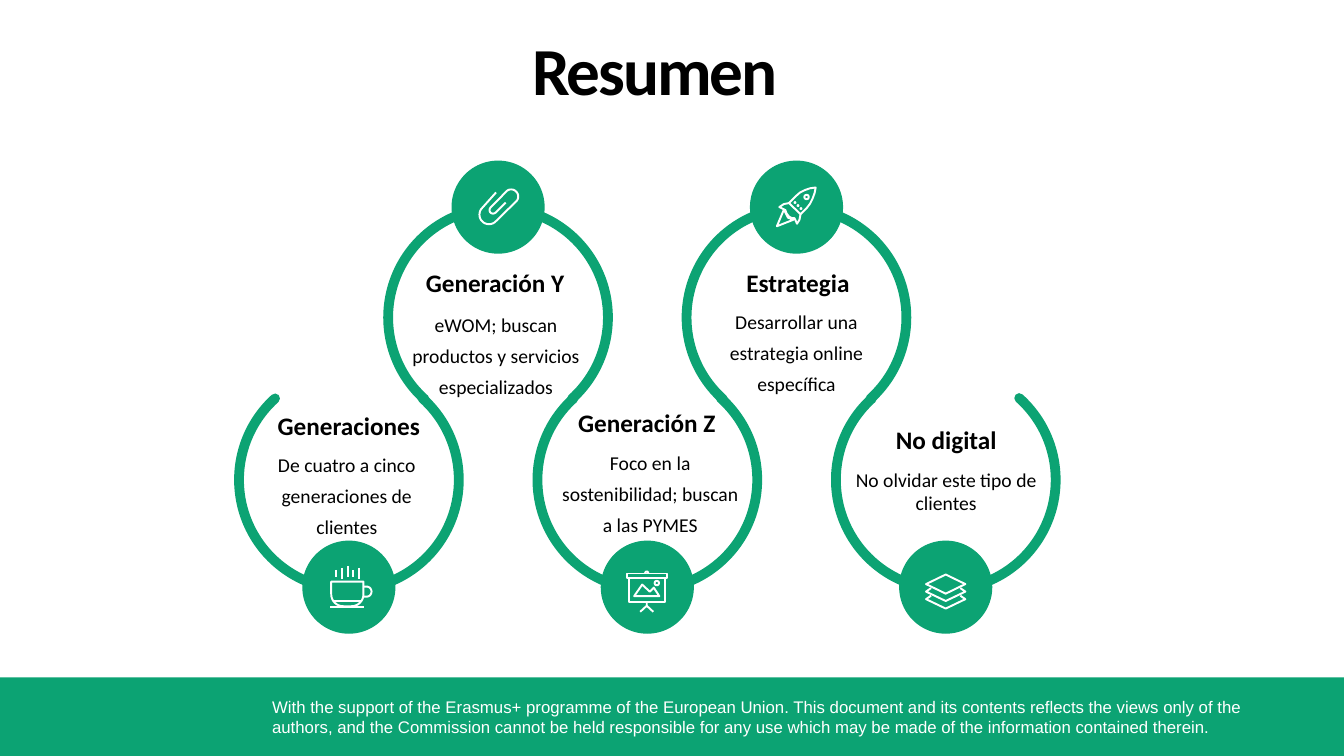
from math import cos, radians, sin

from lxml.etree import SubElement
from pptx import Presentation
from pptx.dml.color import RGBColor
from pptx.enum.shapes import MSO_SHAPE as Shape
from pptx.enum.text import MSO_ANCHOR as Anchor, MSO_AUTO_SIZE as AutoSize, PP_ALIGN as Align
from pptx.oxml.ns import qn
from pptx.util import Inches, Pt

GREEN, WHITE, BLACK = "0CA373", "FFFFFF", "000000"


def curve(x, y, radius, start=0, end=360):
    angles = [radians(start + (end - start) * step / 16) for step in range(17)]
    return [(x + radius * cos(a), y + radius * sin(a)) for a in angles]


CUP = [
    [(10, 160), (330, 160), *curve(210, 285, 120, 0, 90), *curve(130, 285, 120, 90, 180), (10, 160)],
    [(35, 350), (305, 350)],
    [(0, 410), (340, 410)],
    [(330, 210), *curve(360, 260, 50, -90, 90), (325, 310)],
    *[[(x, top), (x, bottom)] for x, top, bottom in
      [(60, 45, 115), (115, 25, 135), (175, 5, 115), (230, 45, 115), (285, 25, 135)]],
]
CLIP = [[(185, 30), *curve(115, 250, 95, 225, 45), *curve(335, 70, 70, 45, -135),
         *curve(155, 205, 35, 225, 45), (280, 130)]]
EASEL = [
    [(10, 30), (410, 30), (410, 70), (10, 70), (10, 30)],
    [(30, 70), (30, 310), (390, 310), (390, 70)],
    curve(210, 25, 15, 180, 360),
    [(210, 310), (210, 350), (145, 410)],
    [(210, 350), (275, 410)],
    [(85, 255), (165, 140), (240, 210), (280, 170), (335, 255), (85, 255)],
    curve(310, 125, 22),
]
ROCKET = [
    [(140, 165), (210, 95), (250, 60), (300, 35), (350, 18), (405, 10), (395, 65),
     (375, 120), (350, 170), (320, 210), (255, 275), (140, 165)],
    [(140, 165), (90, 175), (45, 205), (105, 235), (115, 265), (140, 300),
     (170, 315), (195, 315), (220, 370), (245, 330), (255, 275)],
    [(90, 230), (20, 395), (185, 330), (130, 310), (90, 230)],
    curve(315, 105, 22),
    *[curve(x, y, 4) for x, y in [(200, 160), (230, 190), (260, 220)]],
]
LAYERS = [
    [(10, 105), (205, 10), (400, 105), (205, 200), (10, 105)],
    *[[(60, y), (10, y + 35), (205, y + 128), (400, y + 35), (350, y)] for y in (145, 220)],
]

TITLE = "Resumen"
FOOTER = ("With the support of the Erasmus+ programme of the European Union. This document and its "
          "contents reflects the views only of the authors, and the Commission cannot be held "
          "responsible for any use which may be made of the information contained therein.")
STEPS = [
    {"head": "Generaciones", "head_box": (2.65, 4.02, 1.62, 0.4),
     "body": "De cuatro a cinco generaciones de clientes", "body_box": (2.44, 4.37, 2, 1),
     "leading": 22.2, "icon": CUP, "icon_offset": (0.27, 0.24)},
    {"head": "Generación Y", "head_box": (4.12, 2.6, 1.58, 0.4),
     "body": "eWOM; buscan productos y servicios especializados", "body_box": (3.92, 2.98, 2, 1.03),
     "leading": 22.2, "icon": CLIP, "icon_offset": (0.25, 0.28)},
    {"head": "Generación Z", "head_box": (5.63, 3.99, 1.57, 0.4),
     "body": "Foco en la sostenibilidad; buscan a las PYMES", "body_box": (5.45, 4.35, 2, 1),
     "leading": 22.2, "icon": EASEL, "icon_offset": (0.24, 0.29)},
    {"head": "Estrategia", "head_box": (7.3, 2.6, 1.23, 0.4),
     "body": "Desarrollar una estrategia online específica", "body_box": (6.9, 2.95, 2, 1),
     "leading": 22.2, "icon": ROCKET, "icon_offset": (0.24, 0.25)},
    {"head": "No digital", "head_box": (8.78, 4.16, 1.21, 0.4),
     "body": "No olvidar este tipo de clientes", "body_box": (8.25, 4.59, 2.27, 0.57),
     "leading": None, "icon": LAYERS, "icon_offset": (0.25, 0.32)},
]
FIRST_LEFT, STEP_WIDTH = 2.37, 1.48
RING, DISC = 2.18, 0.91
LOW_RING_TOP, HIGH_RING_TOP = 3.67, 2.06
LOW_DISC_TOP, HIGH_DISC_TOP = 5.37, 1.6


def color(value):
    return RGBColor.from_string(value)


def inches(*lengths):
    return [Inches(length) for length in lengths]


def paint(shape, fill=None, line=None, width=1):
    shape.shadow.inherit = False
    if fill:
        shape.fill.solid()
        shape.fill.fore_color.rgb = color(fill)
    else:
        shape.fill.background()
    if line:
        shape.line.color.rgb = color(line)
        shape.line.width = Pt(width)
    else:
        shape.line.fill.background()


def write(box, text, size, ink=BLACK, font="Calibri", bold=False, align=Align.CENTER, leading=None):
    para = box.text_frame.paragraphs[0]
    para.text = text
    para.alignment = align
    if leading:
        para.line_spacing = Pt(leading)
    para.font.size = Pt(size)
    para.font.name = font
    para.font.bold = bold
    para.font.color.rgb = color(ink)
    return para


def add_text(page, area, text, size, wrap=True, **style):
    box = page.shapes.add_textbox(*inches(*area))
    box.text_frame.word_wrap = wrap
    write(box, text, size, **style)


def add_icon(page, strokes, left, top):
    first = strokes[0]
    builder = page.shapes.build_freeform(*first[0], scale=Inches(0.001))
    builder.add_line_segments(first[1:], close=False)
    for stroke in strokes[1:]:
        builder.move_to(*stroke[0])
        builder.add_line_segments(stroke[1:], close=False)
    paint(builder.convert_to_shape(*inches(left, top)), line=WHITE, width=1.4)


def add_ring(page, left, top, flipped):
    ring = page.shapes.add_shape(Shape.ARC, *inches(left, top, RING, RING))
    ring.adjustments[0], ring.adjustments[1] = 79.141, 28.684
    ring.rotation = 180 if flipped else 0
    paint(ring, line=GREEN, width=7)
    outline = ring.line._get_or_add_ln()
    outline.set("cap", "rnd")
    SubElement(outline, qn("a:round"))


def main():
    deck = Presentation()
    deck.slide_width, deck.slide_height = inches(13.33, 7.5)
    page = deck.slides.add_slide(deck.slide_layouts[5])

    band = page.shapes.add_shape(Shape.RECTANGLE, *inches(0, 6.72, 13.33, 0.78))
    paint(band, fill=GREEN)
    add_text(page, (2.6, 6.86, 10.42, 0.5), FOOTER, 12, ink=WHITE, font="Arial", align=Align.LEFT)

    for index, step in reversed(list(enumerate(STEPS))):
        low = index % 2 == 0
        ring_left = FIRST_LEFT + index * STEP_WIDTH
        add_ring(page, ring_left, LOW_RING_TOP if low else HIGH_RING_TOP, low)
        disc_left = ring_left + (RING - DISC) / 2
        disc_top = LOW_DISC_TOP if low else HIGH_DISC_TOP
        disc = page.shapes.add_shape(Shape.OVAL, *inches(disc_left, disc_top, DISC, DISC))
        paint(disc, fill=GREEN, line=GREEN)
        shift_x, shift_y = step["icon_offset"]
        add_icon(page, step["icon"], disc_left + shift_x, disc_top + shift_y)

    for step in STEPS:
        add_text(page, step["body_box"], step["body"], 14, leading=step["leading"])
        add_text(page, step["head_box"], step["head"], 18, wrap=False, bold=True)

    title = page.shapes.title
    title.left, title.top, title.width, title.height = inches(4.8, 0.27, 3.39, 0.82)
    frame = title.text_frame
    frame.margin_left = frame.margin_right = frame.margin_bottom = 0
    frame.margin_top = Inches(0.01)
    frame.vertical_anchor = Anchor.TOP
    frame.auto_size = AutoSize.NONE
    para = write(title, TITLE, 48, bold=True)
    para.runs[0]._r.get_or_add_rPr().set("spc", "-150")

    deck.save("out.pptx")


if __name__ == "__main__":
    main()
